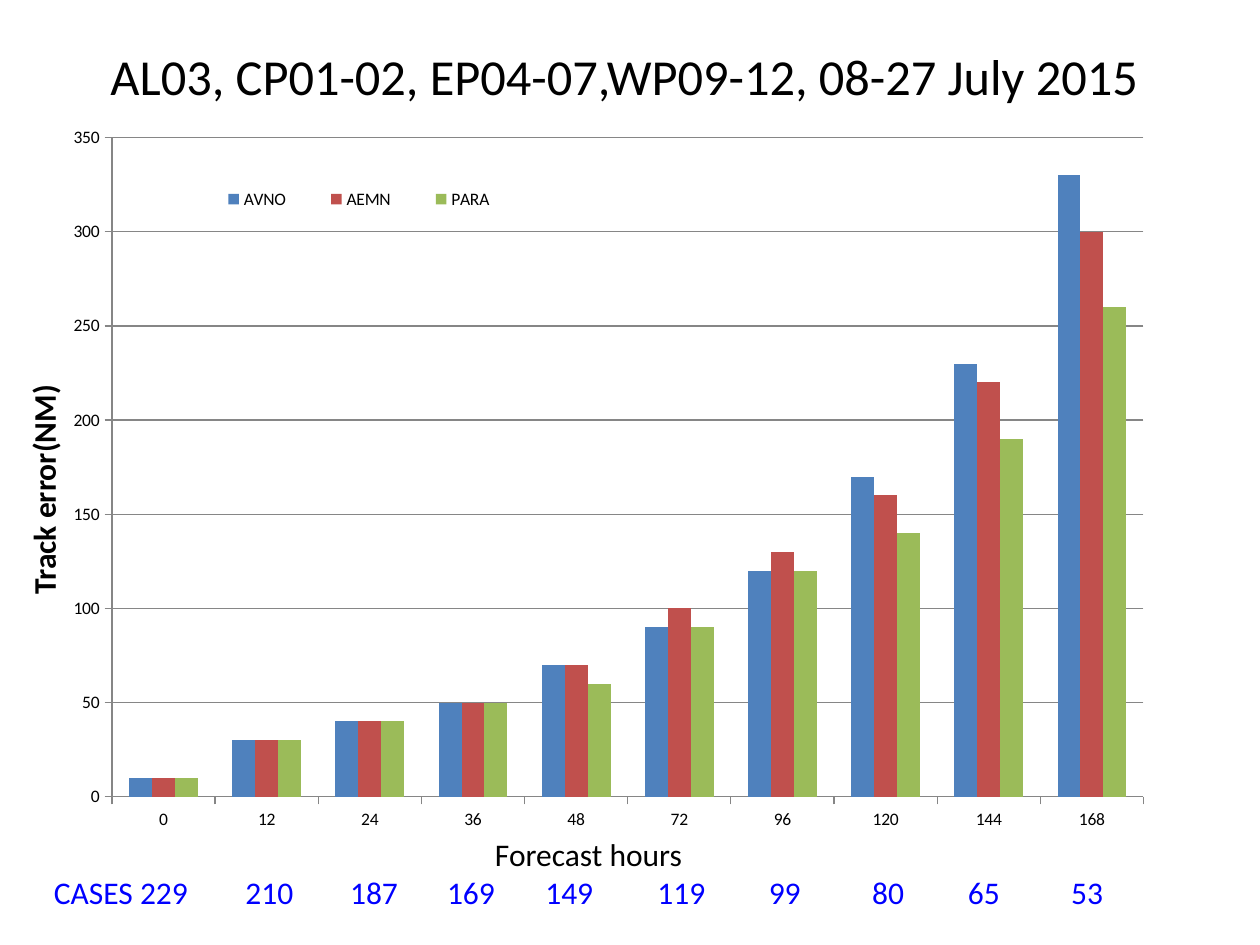
from dataclasses import dataclass
from pptx import Presentation
from pptx import util as u
from pptx.chart.data import CategoryChartData
from pptx.dml.color import RGBColor
from pptx.enum import chart as ch, text as tx
from pptx.oxml import parse_xml
from pptx.oxml.ns import nsdecls


@dataclass(frozen=True)
class Theme:
    face: str = "Calibri"
    ink: str = "000000"
    blue: str = "0000FF"
    grid: str = "868686"
    title: float = 28.8
    body: float = 18
    tick: float = 10


@dataclass(frozen=True)
class Series:
    name: str
    color: str
    vals: tuple


@dataclass(frozen=True)
class Label:
    box: tuple
    lines: tuple
    size: float
    frame: dict
    turn: float = 0
    bold: bool = False
    align: tx.PP_ALIGN = tx.PP_ALIGN.LEFT


THEME = Theme()
HOURS = ("0", "12", "24", "36", "48", "72", "96", "120", "144", "168")
CASES = (229, 210, 187, 169, 149, 119, 99, 80, 65, 53)
STOPS = (1.71, 2.54, 3.31, 4.09, 4.98, 5.8, 6.62, 7.38, 8.2)
INDENT = 3.5
ERRORS = (
    Series("AVNO", "4F81BD", (10, 30, 40, 50, 70, 90, 120, 170, 230, 330)),
    Series("AEMN", "C0504D", (10, 30, 40, 50, 70, 100, 130, 160, 220, 300)),
    Series("PARA", "9BBB59", (10, 30, 40, 50, 60, 90, 120, 140, 190, 260)),
)
LABELS = (
    Label((0.5, 0.29, 8.92, 0.62),
          (("AL03, CP01-02, EP04-07,WP09-12, 08-27 July 2015", THEME.ink),),
          THEME.title, {"word_wrap": True, "vertical_anchor": tx.MSO_ANCHOR.MIDDLE},
          align=tx.PP_ALIGN.CENTER),
    Label((-0.69, 3.58, 2.07, 0.4), (("Track error(NM)", THEME.ink),),
          THEME.body, {"word_wrap": False}, turn=270, bold=True),
)
FOOT = Label((0.33, 6.58, 9.08, 0.71),
             (("Forecast hours", THEME.ink),
              ("CASES " + "\t".join(map(str, CASES)), THEME.blue)),
             THEME.body, {"word_wrap": True})


def apply(obj, values: dict) -> None:
    for key, val in values.items():
        setattr(obj, key, val)


def style(font, size: float, color: str, bold: bool = False) -> None:
    apply(font, {"name": THEME.face, "size": u.Pt(size), "bold": bold})
    font.color.rgb = RGBColor.from_string(color)


def write(slide, label: Label):
    box = slide.shapes.add_textbox(*map(u.Inches, label.box))
    box.rotation = label.turn
    frame = box.text_frame
    apply(frame, label.frame)
    for i, (words, color) in enumerate(label.lines):
        para = frame.add_paragraph() if i else frame.paragraphs[0]
        para.alignment = label.align
        run = para.add_run()
        run.text = words
        style(run.font, label.size, color, label.bold)
    return frame


def align_cases(frame) -> None:
    head, row = frame.paragraphs
    head._p.get_or_add_pPr().set("marL", str(u.Inches(INDENT)))
    tabs = "".join(f'<a:tab pos="{u.Inches(stop)}" algn="ctr"/>' for stop in STOPS)
    row._p.get_or_add_pPr().append(
        parse_xml(f'<a:tabLst {nsdecls("a")}>{tabs}</a:tabLst>'))


def layout(x: float, y: float, w: float, h: float, inner: bool = False):
    target = '<c:layoutTarget val="inner"/>' if inner else ""
    modes = "".join(f'<c:{k}Mode val="edge"/>' for k in "xy")
    sizes = "".join(f'<c:{k} val="{v}"/>' for k, v in zip("xywh", (x, y, w, h)))
    return parse_xml(f'<c:layout {nsdecls("c")}><c:manualLayout>{target}{modes}'
                     f'{sizes}</c:manualLayout></c:layout>')


def clear(part, tag: str) -> None:
    for old in part.findall(tag):
        part.remove(old)


def line(fmt) -> None:
    fmt.line.color.rgb = RGBColor.from_string(THEME.grid)
    fmt.line.width = u.Pt(0.75)


def plot(slide) -> None:
    data = CategoryChartData()
    data.categories = HOURS
    for item in ERRORS:
        data.add_series(item.name, item.vals)
    box = map(u.Inches, (0.54, 0.92, 8.71, 5.75))
    chart = slide.shapes.add_chart(ch.XL_CHART_TYPE.COLUMN_CLUSTERED, *box, data).chart
    apply(chart, {"has_title": False, "has_legend": True})
    style(chart.font, THEME.tick, THEME.ink)
    bars = chart.plots[0]
    apply(bars, {"gap_width": 150, "overlap": 0, "vary_by_categories": False})
    for bar, item in zip(bars.series, ERRORS):
        bar.format.fill.solid()
        bar.format.fill.fore_color.rgb = RGBColor.from_string(item.color)
    for axis in (chart.category_axis, chart.value_axis):
        axis.major_tick_mark = ch.XL_TICK_MARK.OUTSIDE
        line(axis.format)
    apply(chart.value_axis, {"minimum_scale": 0, "maximum_scale": 350,
                             "major_unit": 50, "has_major_gridlines": True})
    line(chart.value_axis.major_gridlines.format)
    area = chart._chartSpace.chart.plotArea
    tag = area.tag.replace("plotArea", "layout")
    clear(area, tag)
    area.insert(0, layout(0.04, 0.03, 0.94, 0.91, True))
    legend = chart.legend
    apply(legend, {"position": ch.XL_LEGEND_POSITION.RIGHT, "include_in_layout": False})
    clear(legend._element, tag)
    legend._element.legendPos.addnext(layout(0.11, 0.09, 0.31, 0.05))


def main() -> None:
    deck = Presentation()
    apply(deck, {"slide_width": u.Inches(10), "slide_height": u.Inches(7.5)})
    slide = deck.slides.add_slide(deck.slide_layouts[6])
    plot(slide)
    for label in LABELS:
        write(slide, label)
    align_cases(write(slide, FOOT))
    deck.save("out.pptx")


if __name__ == "__main__":
    main()
